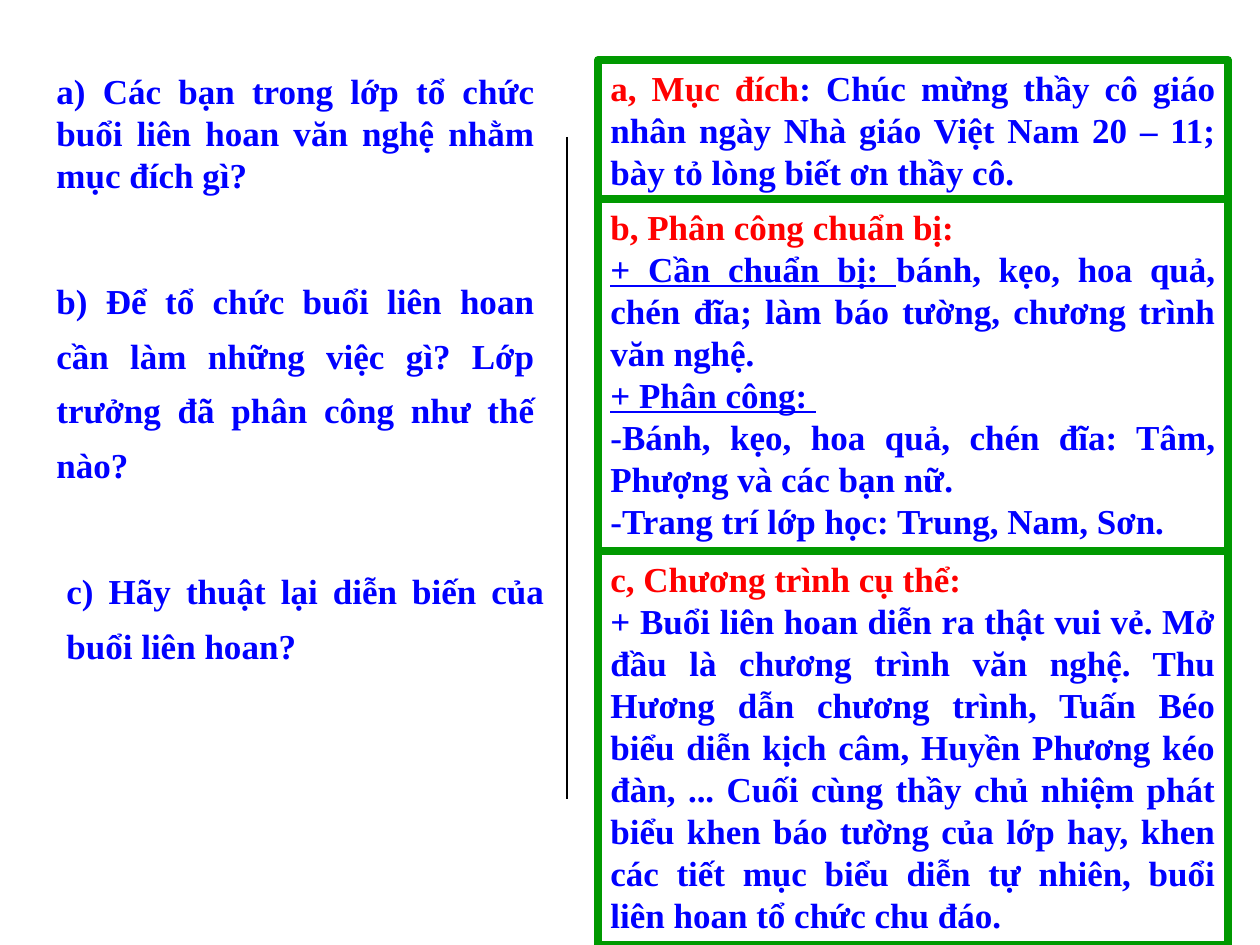
from lxml import etree
from pptx import Presentation
from pptx.dml.color import RGBColor
from pptx.enum.shapes import MSO_CONNECTOR, MSO_SHAPE
from pptx.enum.text import MSO_ANCHOR, MSO_AUTO_SIZE, PP_ALIGN
from pptx.oxml.ns import qn
from pptx.util import Pt

PX = 914400 / 126
BLUE, RED, GREEN, BLACK = "0000FF", "FF0000", "009900", "000000"
FRAME_FORMAT = {"word_wrap": True, "auto_size": MSO_AUTO_SIZE.SHAPE_TO_FIT_TEXT,
                "vertical_anchor": MSO_ANCHOR.TOP}
FONT_FORMAT = {"name": "Times New Roman", "size": Pt(20), "bold": True}


def emu(*lengths):
    """Turn px lengths into EMU."""
    return [round(length * PX) for length in lengths]


def write(frame, paragraphs, spacing=1.0):
    """Fill a text frame; each paragraph lists (text, colour, underlined) runs."""
    for name, value in FRAME_FORMAT.items():
        setattr(frame, name, value)
    for i, runs in enumerate(paragraphs):
        paragraph = frame.add_paragraph() if i else frame.paragraphs[0]
        paragraph.alignment = PP_ALIGN.JUSTIFY
        paragraph.line_spacing = spacing
        for text, colour, underlined in runs:
            run = paragraph.add_run()
            run.text = text
            for name, value in FONT_FORMAT.items():
                setattr(run.font, name, value)
            run.font.underline = underlined
            run.font.color.rgb = RGBColor.from_string(colour)


deck = Presentation()
deck.slide_width, deck.slide_height = emu(1260, 945)
slide = deck.slides.add_slide(deck.slide_layouts[6])

# Questions on the left: left, top, height, line spacing, wording
questions = [
    (44, 63, 140, 1.0, "a) Các bạn trong lớp tổ chức buổi liên hoan văn nghệ nhằm mục đích gì?"),
    (44, 261, 228, 1.3, "b) Để tổ chức buổi liên hoan cần làm những việc gì? "
                        "Lớp trưởng đã phân công như thế nào?"),
    (54, 551, 117, 1.3, "c) Hãy thuật lại diễn biến của buổi liên hoan?"),
]
for left, top, height, spacing, question in questions:
    box = slide.shapes.add_textbox(*emu(left, top, 503, height))
    write(box.text_frame, [[(question, BLUE, False)]], spacing)

divider = slide.shapes.add_connector(MSO_CONNECTOR.STRAIGHT, *emu(567, 137, 567, 799))
divider.line.width = Pt(0.75)
divider.line.color.rgb = RGBColor.from_string(BLACK)
etree.SubElement(divider._element.spPr, qn("a:effectLst"))

# Answers on the right, stacked edge to edge: height, paragraphs
answers = [
    (139, [
        [("a, Mục đích", RED, False),
         (": Chúc mừng thầy cô giáo nhân ngày Nhà giáo Việt Nam 20 – 11; "
          "bày tỏ lòng biết ơn thầy cô.", BLUE, False)],
    ]),
    (352, [
        [("b, Phân công chuẩn bị:", RED, False)],
        [("+ Cần chuẩn bị: ", BLUE, True),
         ("bánh, kẹo, hoa quả, chén đĩa; làm báo tường, chương trình văn nghệ.", BLUE, False)],
        [("+ Phân công: ", BLUE, True)],
        [("-Bánh, kẹo, hoa quả, chén đĩa: Tâm, Phượng và các bạn nữ.", BLUE, False)],
        [("-Trang trí lớp học: Trung, Nam, Sơn.", BLUE, False)],
    ]),
    (394, [
        [("c, Chương trình cụ thể:", RED, False)],
        [("+ Buổi liên hoan diễn ra thật vui vẻ. Mở đầu là chương trình văn nghệ. "
          "Thu Hương dẫn chương trình, Tuấn Béo biểu diễn kịch câm, Huyền Phương kéo đàn, ... "
          "Cuối cùng thầy chủ nhiệm phát biểu khen báo tường của lớp hay, khen các tiết mục "
          "biểu diễn tự nhiên, buổi liên hoan tổ chức chu đáo.", BLUE, False)],
    ]),
]
top = 60
for height, paragraphs in answers:
    panel = slide.shapes.add_shape(MSO_SHAPE.RECTANGLE, *emu(598, top, 630, height))
    panel.shadow.inherit = False
    panel.fill.background()
    panel.line.width = Pt(4.5)
    panel.line.color.rgb = RGBColor.from_string(GREEN)
    write(panel.text_frame, paragraphs)
    top += height

deck.save("out.pptx")
